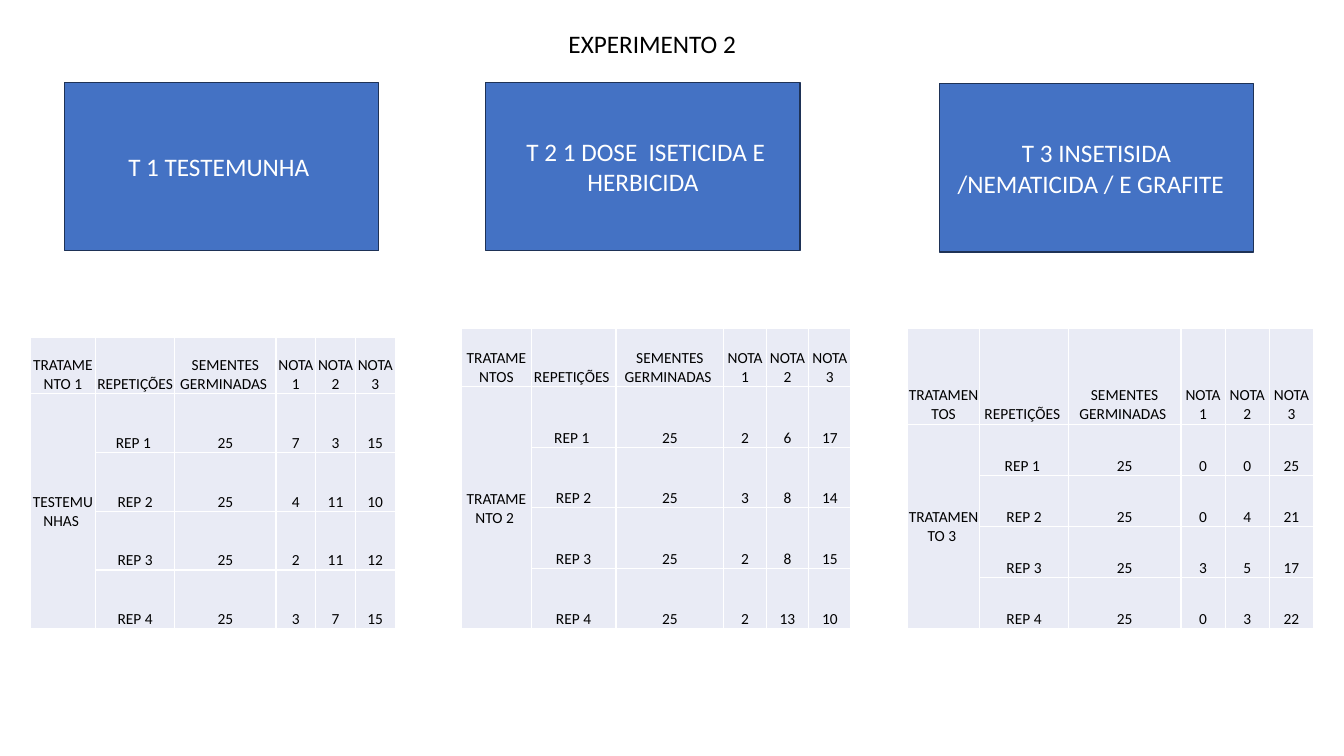
from dataclasses import dataclass

from lxml.etree import SubElement
from pptx import Presentation
from pptx.dml.color import RGBColor
from pptx.enum.shapes import MSO_SHAPE
from pptx.enum.text import MSO_ANCHOR, MSO_AUTO_SIZE, PP_ALIGN
from pptx.oxml.ns import qn
from pptx.util import Pt


@dataclass(frozen=True)
class Theme:
    """Colours, font and type sizes of the deck."""
    font: str = "Calibri"
    ink: str = "000000"
    paper: str = "FFFFFF"
    accent: str = "4472C4"
    outline: str = "1E3256"
    cell: str = "E9EBF5"
    heading_size: float = 18
    table_size: float = 11
    line_width: float = 1


def apply(target, values):
    """Set each named attribute of the target."""
    for name, value in values.items():
        setattr(target, name, value)


class SlideBuilder:
    """Draws styled elements on the current slide."""

    def __init__(self, theme, page):
        """Keep the theme and the slide."""
        self.theme = theme
        self.page = page

    def add_text(self, frame, text, size, color, align):
        """Put one formatted paragraph in a text frame."""
        para = frame.paragraphs[0]
        para.alignment = align
        span = para.add_run()
        span.text = text
        apply(span.font, {"name": self.theme.font, "size": Pt(size)})
        span.font.color.rgb = RGBColor.from_string(color)

    def title(self, text, left, top, width, height):
        """Add the unwrapped slide title."""
        box = self.page.shapes.add_textbox(Pt(left), Pt(top), Pt(width), Pt(height))
        apply(box.text_frame, {"word_wrap": False, "auto_size": MSO_AUTO_SIZE.SHAPE_TO_FIT_TEXT})
        self.add_text(box.text_frame, text, self.theme.heading_size, self.theme.ink, PP_ALIGN.LEFT)

    def panel(self, text, left, top, width, height):
        """Add a filled treatment panel."""
        box = self.page.shapes.add_shape(
            MSO_SHAPE.RECTANGLE, Pt(left), Pt(top), Pt(width), Pt(height))
        box.shadow.inherit = False
        box.fill.solid()
        box.fill.fore_color.rgb = RGBColor.from_string(self.theme.accent)
        box.line.color.rgb = RGBColor.from_string(self.theme.outline)
        box.line.width = Pt(self.theme.line_width)
        apply(box.text_frame, {"word_wrap": True, "vertical_anchor": MSO_ANCHOR.MIDDLE})
        self.add_text(box.text_frame, text, self.theme.heading_size,
                      self.theme.paper, PP_ALIGN.CENTER)

    def borders(self, cell):
        """Draw the four borders of a cell."""
        properties = cell._tc.get_or_add_tcPr()
        for side in ("lnL", "lnR", "lnT", "lnB"):
            line = SubElement(properties, qn(f"a:{side}"), w=str(Pt(self.theme.line_width)))
            fill = SubElement(line, qn("a:solidFill"))
            SubElement(fill, qn("a:srgbClr"), val=self.theme.paper)

    def table(self, rows, left, top, widths, heights):
        """Add a table whose first column is merged below the header."""
        frame = self.page.shapes.add_table(
            len(rows), len(widths), Pt(left), Pt(top), Pt(sum(widths)), Pt(sum(heights)))
        table = frame.table
        apply(table, {"first_row": False, "horz_banding": False})
        for column, width in zip(table.columns, widths):
            column.width = Pt(width)
        for row, height in zip(table.rows, heights):
            row.height = Pt(height)
        table.cell(1, 0).merge(table.cell(len(rows) - 1, 0))
        cell_format = {"margin_left": Pt(0.7), "margin_right": Pt(0.7),
                       "margin_top": Pt(0.7), "margin_bottom": Pt(0)}
        for row_index, values in enumerate(rows):
            for column_index, text in enumerate(values):
                cell = table.cell(row_index, column_index)
                merged = row_index > 0 and column_index == 0
                anchor = MSO_ANCHOR.MIDDLE if merged else MSO_ANCHOR.BOTTOM
                apply(cell, {**cell_format, "vertical_anchor": anchor})
                self.borders(cell)
                cell.fill.solid()
                cell.fill.fore_color.rgb = RGBColor.from_string(self.theme.cell)
                if text:
                    self.add_text(cell.text_frame, text, self.theme.table_size,
                                  self.theme.ink, PP_ALIGN.CENTER)


HEADINGS = ["REPETIÇÕES ", "SEMENTES GERMINADAS ", "NOTA 1", "NOTA 2", "NOTA 3"]
REPETITIONS = ["REP 1 ", "REP 2", "REP 3", "REP 4"]
SEEDS = "25"
COLUMN_SHARES = [0.18, 0.22, 0.28, 0.11, 0.11, 0.11]
PANEL_SIZE = (224.6, 120.2)
PANELS = [
    ("T 1 TESTEMUNHA ", 46, 59),
    (" T 2 1 DOSE  ISETICIDA E HERBICIDA", 347, 59),
    ("T 3 INSETISIDA /NEMATICIDA / E GRAFITE  ", 671, 59.8),
]
TABLES = [
    {"heading": "TRATAMENTO 1", "label": "TESTEMUNHAS ", "place": (21.7, 241.2),
     "width": 260.6, "header": 40, "body": 42,
     "grades": [(7, 3, 15), (4, 11, 10), (2, 11, 12), (3, 7, 15)]},
    {"heading": "TRATAMENTOS", "label": "TRATAMENTO 2 ", "place": (329.8, 234.8),
     "width": 278.2, "header": 41.4, "body": 43.3,
     "grades": [(2, 6, 17), (3, 8, 14), (2, 8, 15), (2, 13, 10)]},
    {"heading": "TRATAMENTOS", "label": "TRATAMENTO 3 ", "place": (648.2, 234.8),
     "width": 290.2, "header": 68.2, "body": 36.6,
     "grades": [(0, 0, 25), (0, 4, 21), (3, 5, 17), (0, 3, 22)]},
]


def main():
    """Build and save the slide."""
    deck = Presentation()
    apply(deck, {"slide_width": Pt(960), "slide_height": Pt(540)})
    page = deck.slides.add_slide(deck.slide_layouts[6])
    builder = SlideBuilder(Theme(), page)
    builder.title("EXPERIMENTO 2", 399, 16.8, 139.7, 29)
    for text, left, top in PANELS:
        builder.panel(text, left, top, *PANEL_SIZE)
    for data in TABLES:
        rows = [[data["heading"], *HEADINGS]]
        for index, (name, grades) in enumerate(zip(REPETITIONS, data["grades"])):
            label = data["label"] if index == 0 else ""
            rows.append([label, name, SEEDS, *map(str, grades)])
        widths = [data["width"] * share / sum(COLUMN_SHARES) for share in COLUMN_SHARES]
        heights = [data["header"]] + [data["body"]] * len(REPETITIONS)
        builder.table(rows, *data["place"], widths, heights)
    deck.save("out.pptx")


if __name__ == "__main__":
    main()
